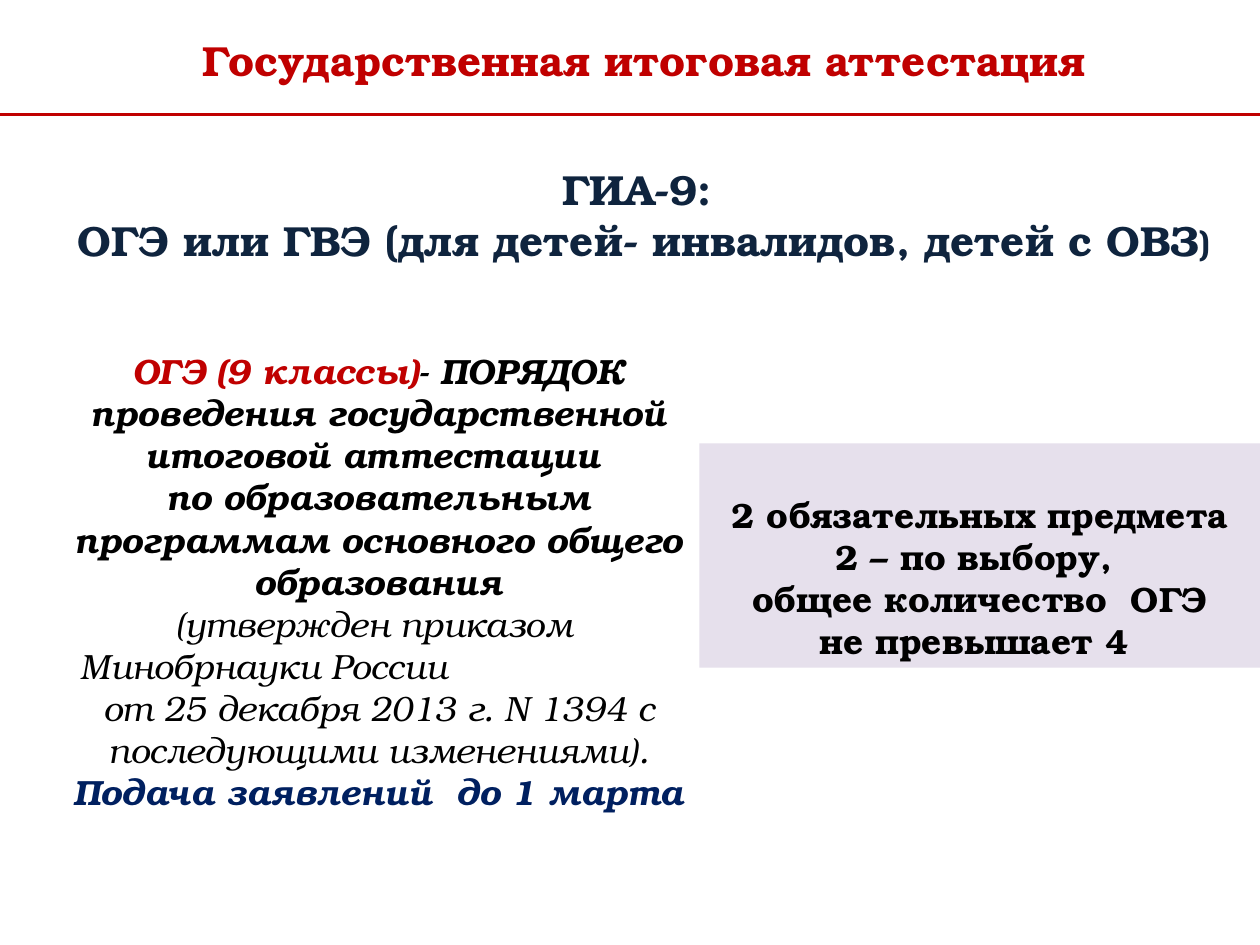
from lxml import etree
from pptx import Presentation
from pptx.dml.color import RGBColor
from pptx.enum.shapes import MSO_CONNECTOR, MSO_SHAPE
from pptx.enum.text import MSO_ANCHOR, PP_ALIGN
from pptx.oxml.ns import qn
from pptx.util import Cm, Pt

CENTER, LEFT = PP_ALIGN.CENTER, PP_ALIGN.LEFT
BOTTOM = MSO_ANCHOR.BOTTOM
RECT, STRAIGHT = MSO_SHAPE.RECTANGLE, MSO_CONNECTOR.STRAIGHT
FONT = "TeX Gyre Bonum"
COLORS = {"red": "C00000", "black": "000000", "blue": "002060",
          "navy": "0F243E", "lilac": "E6E0EC"}


def rgb(name):
    return RGBColor.from_string(COLORS[name])


def add_text(tf, paragraphs, size, color, bold=True, italic=False):
    """Each paragraph is a list of (text, overrides); a newline is a line break."""
    tf.word_wrap = True
    for i, runs in enumerate(paragraphs):
        p = tf.paragraphs[0] if i == 0 else tf.add_paragraph()
        p.alignment = CENTER
        for text, look in runs:
            for j, line in enumerate(text.split("\n")):
                if j:
                    p.add_line_break()
                r = p.add_run()
                r.text = line
                r.font.name = FONT
                r.font.size = Pt(look.get("size", size))
                r.font.bold = look.get("bold", bold)
                r.font.italic = italic
                r.font.color.rgb = rgb(look.get("color", color))


prs = Presentation()
prs.slide_width, prs.slide_height = Cm(25.4), Cm(19.05)
s = prs.slides.add_slide(prs.slide_layouts[6])

# Title and rule
sp = s.shapes.add_textbox(Cm(1.57), Cm(0.58), Cm(22.81), Cm(1.19))
add_text(sp.text_frame, [[("Государственная итоговая аттестация", {})]], 24, "red")

rule = s.shapes.add_connector(STRAIGHT, 0, Cm(2.31), prs.slide_width, Cm(2.31))
rule.line.color.rgb = rgb("red")
rule.line.width = Pt(2)
etree.SubElement(rule._element.spPr, qn("a:effectLst"))

# Subjects panel
sp = s.shapes.add_shape(RECT, Cm(14.1), Cm(8.94), Cm(11.3), Cm(4.52))
sp.shadow.inherit = False
sp.fill.solid()
sp.fill.fore_color.rgb = rgb("lilac")
sp.line.fill.background()
sp.text_frame.vertical_anchor = BOTTOM
add_text(sp.text_frame, [
    [("2 обязательных предмета", {})],
    [("2 – по выбору, ", {})],
    [("общее количество  ОГЭ", {})],
    [("не превышает 4 ", {})],
], 20, "black")

# Exam regulations
plain = {"bold": False}
sp = s.shapes.add_textbox(Cm(0.79), Cm(6.93), Cm(13.69), Cm(9.65))
tf = sp.text_frame
add_text(tf, [
    [("ОГЭ (9 классы)", {"color": "red"}),
     ("- ПОРЯДОК\nпроведения государственной итоговой аттестации \n"
      "по образовательным программам основного общего образования", {})],
    [("(утвержден приказом ", plain)],
    [("Минобрнауки России", plain)],
    [("от 25 декабря 2013 г. N 1394 с последующими изменениями).", plain)],
    [("Подача заявлений  до 1 марта", {"color": "blue"})],
], 20, "black", italic=True)
ministry = tf.paragraphs[2]
ministry.alignment = LEFT
ministry._p.get_or_add_pPr().set("marL", str(Cm(0.57)))

# Subtitle
sp = s.shapes.add_textbox(Cm(0.99), Cm(3.18), Cm(24), Cm(2.31))
add_text(sp.text_frame, [
    [("ГИА-9: ", {})],
    [("ОГЭ или ГВЭ (для детей- инвалидов, детей с ОВЗ", {}), (")", {"size": 20})],
], 24, "navy")

prs.save("out.pptx")
